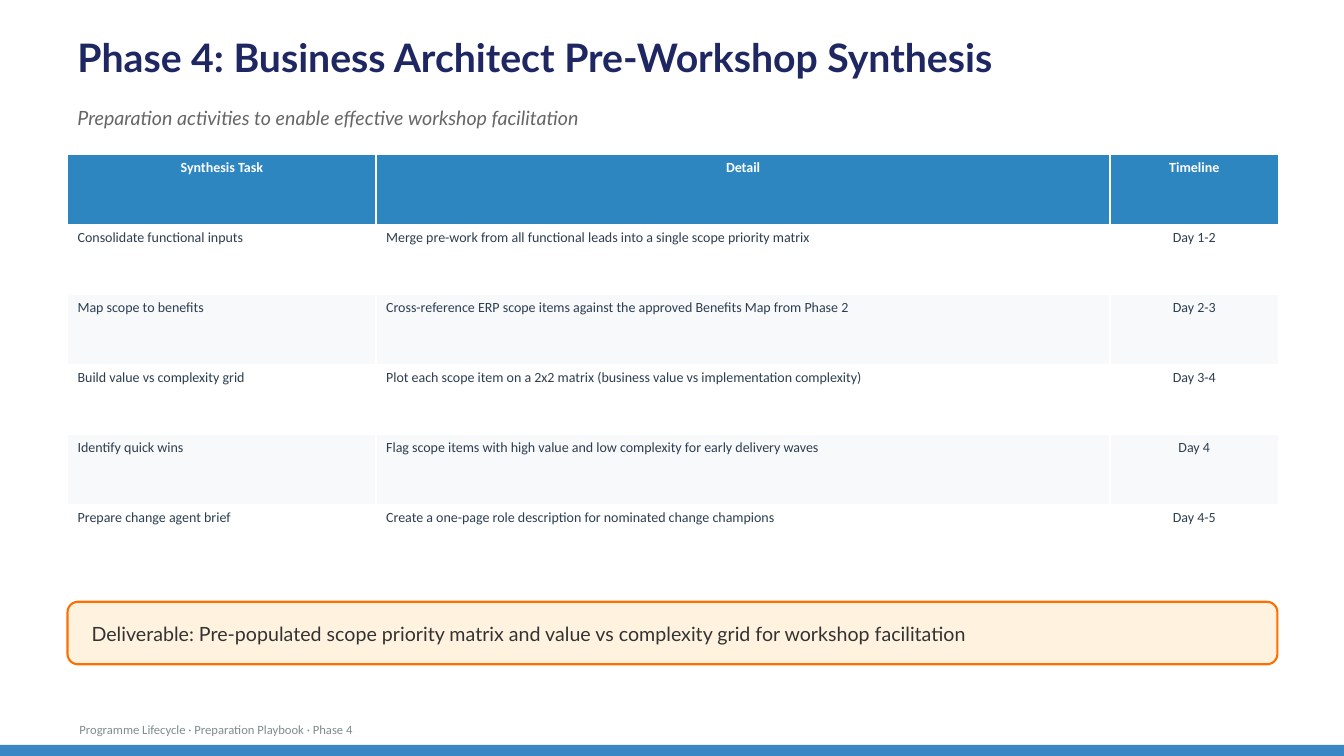
import pptx
import pptx.util
import pptx.dml.color
import pptx.enum.shapes
import pptx.enum.text

Inches, Pt = pptx.util.Inches, pptx.util.Pt
SHAPE = pptx.enum.shapes.MSO_SHAPE
ALIGN = pptx.enum.text.PP_ALIGN
ANCHOR = pptx.enum.text.MSO_ANCHOR

TITLE = "Phase 4: Business Architect Pre-Workshop Synthesis"
SUBTITLE = "Preparation activities to enable effective workshop facilitation"
TASKS = [
    ("Synthesis Task", "Detail", "Timeline"),
    ("Consolidate functional inputs",
     "Merge pre-work from all functional leads into a single scope priority matrix", "Day 1-2"),
    ("Map scope to benefits",
     "Cross-reference ERP scope items against the approved Benefits Map from Phase 2", "Day 2-3"),
    ("Build value vs complexity grid",
     "Plot each scope item on a 2x2 matrix (business value vs implementation complexity)", "Day 3-4"),
    ("Identify quick wins",
     "Flag scope items with high value and low complexity for early delivery waves", "Day 4"),
    ("Prepare change agent brief",
     "Create a one-page role description for nominated change champions", "Day 4-5"),
]
DELIVERABLE = ("Deliverable: Pre-populated scope priority matrix and value vs complexity grid "
               "for workshop facilitation")
FOOTER = "Programme Lifecycle · Preparation Playbook · Phase 4"

COLORS = {
    "title": "1E2761", "subtitle": "666666", "header": "2E86C1", "white": "FFFFFF",
    "cell": "2C3E50", "band": "F8F9FA", "callout": "FFF3E0", "callout_line": "FF6F00",
    "callout_text": "333333", "footer": "7F8C8D", "bar": "3A87C6",
}
SLIDE_W, SLIDE_H = 13.33, 7.5
LEFT, WIDTH = 0.67, 12
COL_WIDTHS = (3.06, 7.28, 1.67)
TABLE_TOP, TABLE_H = 1.53, 4.17
BAR_H = 0.11


def rgb(name):
    return pptx.dml.color.RGBColor.from_string(COLORS[name])


def write(tf, text, size=10, font="Calibri", color="cell", bold=False, italic=False,
          align=ALIGN.LEFT):
    p = tf.paragraphs[0]
    p.alignment = align
    r = p.add_run()
    r.text = text
    f = r.font
    f.size, f.name, f.bold, f.italic = Pt(size), font, bold, italic
    f.color.rgb = rgb(color)


def add_text(slide, box, text, anchor=ANCHOR.TOP, **fmt):
    tf = slide.shapes.add_textbox(*map(Inches, box)).text_frame
    tf.word_wrap = True
    tf.vertical_anchor = anchor
    write(tf, text, **fmt)


def add_panel(slide, kind, box, fill, line=None):
    sp = slide.shapes.add_shape(kind, *map(Inches, box))
    sp.shadow.inherit = False
    sp.fill.solid()
    sp.fill.fore_color.rgb = rgb(fill)
    if line:
        sp.line.color.rgb = rgb(line)
        sp.line.width = Pt(1.5)
    else:
        sp.line.fill.background()


def add_task_table(slide):
    table = slide.shapes.add_table(len(TASKS), len(COL_WIDTHS), Inches(LEFT), Inches(TABLE_TOP),
                                   Inches(WIDTH), Inches(TABLE_H)).table
    for col, width in zip(table.columns, COL_WIDTHS):
        col.width = Inches(width)
    for i, row in enumerate(TASKS):
        header = i == 0
        fill = "header" if header else "white" if i % 2 else "band"
        for j, text in enumerate(row):
            cell = table.cell(i, j)
            cell.fill.solid()
            cell.fill.fore_color.rgb = rgb(fill)
            centred = header or j == len(row) - 1
            write(cell.text_frame, text, bold=header, color="white" if header else "cell",
                  align=ALIGN.CENTER if centred else ALIGN.LEFT)


def main():
    prs = pptx.Presentation()
    prs.slide_width, prs.slide_height = Inches(SLIDE_W), Inches(SLIDE_H)
    slide = prs.slides.add_slide(prs.slide_layouts[6])

    add_text(slide, (LEFT, 0.28, WIDTH, 0.69), TITLE, size=28, font="Lato", color="title", bold=True)
    add_text(slide, (LEFT, 1, WIDTH, 0.39), SUBTITLE, size=14, font="Lato", color="subtitle",
             italic=True)
    add_task_table(slide)
    add_panel(slide, SHAPE.ROUNDED_RECTANGLE, (LEFT, 5.97, WIDTH, 0.62), "callout", "callout_line")
    add_text(slide, (0.81, 6.04, 11.72, 0.49), DELIVERABLE, anchor=ANCHOR.MIDDLE, size=14,
             font="Lato", color="callout_text")
    add_text(slide, (0.69, 7.11, 6.94, 0.28), FOOTER, size=9, color="footer")
    add_panel(slide, SHAPE.RECTANGLE, (0, SLIDE_H - BAR_H, SLIDE_W, BAR_H), "bar")
    prs.save("out.pptx")


if __name__ == "__main__":
    main()
